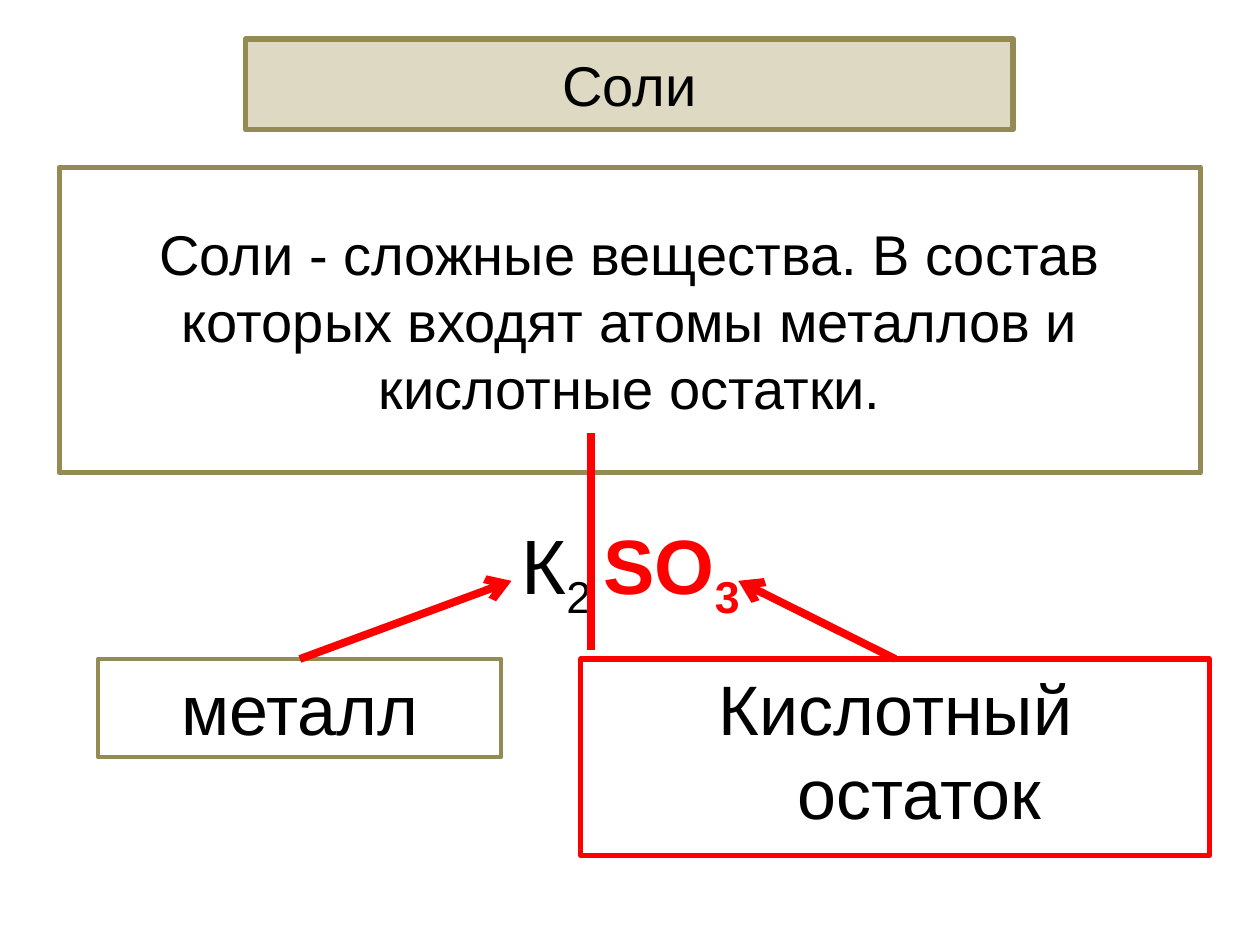
from pptx import Presentation
from pptx.dml.color import RGBColor
from pptx.enum.shapes import MSO_CONNECTOR as Connector, MSO_SHAPE as Preset
from pptx.enum.text import MSO_ANCHOR as Anchor, MSO_AUTO_SIZE as AutoSize, PP_ALIGN as Align
from pptx.oxml.ns import qn
from pptx.util import Inches, Pt
from lxml import etree

COLORS = {"text": "000000", "olive": "948A54", "sand": "DDD9C3", "red": "FF0000"}
FONT = "Arial"


def rgb(name):
    return RGBColor.from_string(COLORS[name])


def place(shape, box):
    shape.left, shape.top, shape.width, shape.height = map(Inches, box)


def frame(shape, line, width=3, fill=None):
    """Outline a box, with an optional fill."""
    if fill:
        shape.fill.solid()
        shape.fill.fore_color.rgb = rgb(fill)
    else:
        shape.fill.background()
    shape.line.color.rgb = rgb(line)
    shape.line.width = Pt(width)


def format_text(shape, size, anchor=Anchor.MIDDLE):
    text_frame = shape.text_frame
    text_frame.word_wrap = True
    text_frame.auto_size = AutoSize.NONE
    text_frame.vertical_anchor = anchor
    paragraph = text_frame.paragraphs[0]
    paragraph.alignment = Align.CENTER
    font = paragraph.font
    font.name, font.size, font.color.rgb = FONT, Pt(size), rgb("text")
    return paragraph


def add_heading(slide, box):
    heading = slide.shapes.title
    place(heading, box)
    frame(heading, "olive", fill="sand")
    heading.text_frame.text = "Соли"
    format_text(heading, 32)


def add_definition(slide, box):
    definition = slide.shapes.add_shape(Preset.ROUNDED_RECTANGLE, *map(Inches, box))
    definition.adjustments[0] = 0
    definition.shadow.inherit = False
    frame(definition, "olive")
    definition.text_frame.text = (
        "Соли - сложные вещества. В состав которых входят атомы металлов "
        "и кислотные остатки."
    )
    format_text(definition, 32)


def add_formula(slide, box):
    formula = slide.shapes.add_textbox(*map(Inches, box))
    paragraph = format_text(formula, 44, Anchor.TOP)
    formula.text_frame.word_wrap = False
    parts = [("К", False, False), ("2 ", False, True), ("SO", True, False), ("3", True, True)]
    for text, is_residue, is_subscript in parts:
        run = paragraph.add_run()
        run.text = text
        if is_residue:
            run.font.bold = True
            run.font.color.rgb = rgb("red")
        if is_subscript:
            run._r.get_or_add_rPr().set("baseline", "-25000")


def label_part(label, text, line, width):
    """Give a part label its frame and hanging, unbulleted text."""
    frame(label, line, width)
    label.text_frame.text = text
    paragraph = format_text(label, 40, Anchor.TOP)
    paragraph.space_before = Pt(8)
    properties = paragraph._p.get_or_add_pPr()
    properties.set("marL", str(Inches(0.38)))
    properties.set("indent", str(Inches(-0.38)))
    properties.insert_element_before(
        properties.makeelement(qn("a:buNone"), {}), "a:tabLst", "a:defRPr", "a:extLst"
    )


def add_residue_label(slide, box):
    residue = slide.placeholders[1]
    place(residue, box)
    label_part(residue, "Кислотный остаток", "red", 3)


def add_metal_label(slide, box):
    metal = slide.shapes.add_shape(Preset.RECTANGLE, *map(Inches, box))
    metal.shadow.inherit = False
    label_part(metal, "металл", "olive", 2.25)


def add_red_line(slide, start, end, arrow=False):
    red_line = slide.shapes.add_connector(Connector.STRAIGHT, *map(Inches, start + end))
    red_line.line.color.rgb = rgb("red")
    red_line.line.width = Pt(4.5)
    if arrow:
        etree.SubElement(red_line.line._get_or_add_ln(), qn("a:tailEnd"), type="arrow")
    etree.SubElement(red_line._element.spPr, qn("a:effectLst"))


def main():
    prs = Presentation()
    prs.slide_width, prs.slide_height = Inches(10), Inches(7.5)
    slide = prs.slides.add_slide(prs.slide_layouts[1])

    # Heading and definition
    add_heading(slide, (1.95, 0.31, 6.09, 0.72))
    add_definition(slide, (0.47, 1.33, 9.06, 2.42))

    # Formula and the names of its two parts
    add_formula(slide, (3.99, 4.06, 2.03, 0.84))
    metal_box = (0.78, 5.23, 3.2, 0.78)
    residue_box = (4.61, 5.23, 4.99, 1.56)
    add_residue_label(slide, residue_box)
    add_metal_label(slide, metal_box)

    # Arrows from the top middle of each label to the formula
    for (left, top, width, _), tip in ((metal_box, (4.06, 4.61)), (residue_box, (5.86, 4.61))):
        add_red_line(slide, (left + width / 2, top), tip, arrow=True)

    # Divider between metal and residue
    add_red_line(slide, (4.69, 3.44), (4.69, 5.16))

    prs.save("out.pptx")


if __name__ == "__main__":
    main()
